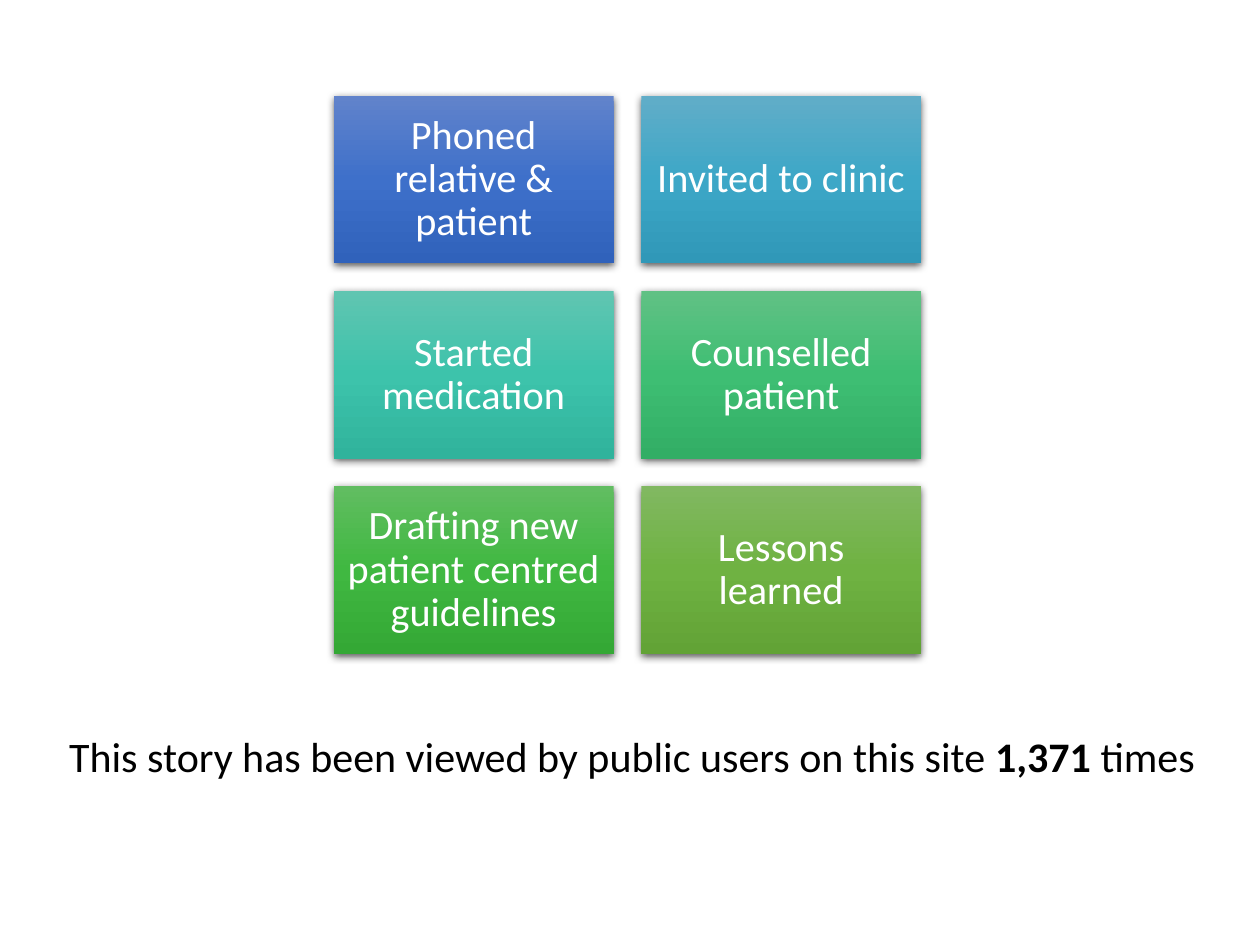
from dataclasses import dataclass

from lxml.etree import SubElement
from pptx import Presentation
from pptx.dml.color import RGBColor
from pptx.enum.shapes import MSO_SHAPE
from pptx.enum.text import MSO_ANCHOR, PP_ALIGN
from pptx.oxml.ns import qn
from pptx.shapes.autoshape import Shape
from pptx.slide import Slide
from pptx.util import Inches, Pt


@dataclass(frozen=True)
class Theme:
    font: str = "Calibri"
    step_size: Pt = Pt(23)
    story_size: Pt = Pt(24)
    step_text: RGBColor = RGBColor(0xFF, 0xFF, 0xFF)
    story_text: RGBColor = RGBColor(0, 0, 0)
    shadow: str = "000000"


@dataclass(frozen=True)
class Step:
    label: str
    top_color: str
    middle_color: str
    bottom_color: str


THEME = Theme()
STEPS = [
    Step("Phoned relative & patient", "6183CB", "3E70CA", "3062BB"),
    Step("Invited to clinic", "61ADC8", "3DA7C7", "3098B8"),
    Step("Started medication", "60C5B1", "3DC3AB", "30B39C"),
    Step("Counselled patient", "60C184", "3EBE73", "32AE65"),
    Step("Drafting new patient centred guidelines", "61BD61", "40B841", "34A835"),
    Step("Lessons learned", "81B861", "6FB242", "62A336"),
]
COLUMNS = 2
GRID_LEFT, GRID_TOP = 2.65, 0.76
STEP_WIDTH, STEP_HEIGHT = 2.22, 1.33
GAP = 0.22


def fill_gradient(tile: Shape, step: Step) -> None:
    """Fill from top to bottom with three evenly spaced stops."""
    tile.fill.gradient()
    tile.fill.gradient_angle = 270
    stops = tile._element.spPr.find(f".//{qn('a:gsLst')}")
    for stop in list(stops):
        stops.remove(stop)
    colors = (step.top_color, step.middle_color, step.bottom_color)
    for index, color in enumerate(colors):
        stop = SubElement(stops, qn("a:gs"), pos=str(index * 50000))
        SubElement(stop, qn("a:srgbClr"), val=color)


def cast_shadow(tile: Shape) -> None:
    tile.shadow.inherit = False
    effects = tile._element.spPr.find(qn("a:effectLst"))
    shadow = SubElement(
        effects, qn("a:outerShdw"), blurRad=str(Pt(4.5)), dist=str(Pt(1.5)),
        dir="5400000", algn="ctr", rotWithShape="0",
    )
    color = SubElement(shadow, qn("a:srgbClr"), val=THEME.shadow)
    SubElement(color, qn("a:alpha"), val="63000")


def add_step(slide: Slide, step: Step, row: int, column: int) -> None:
    tile = slide.shapes.add_shape(
        MSO_SHAPE.RECTANGLE,
        Inches(GRID_LEFT + column * (STEP_WIDTH + GAP)),
        Inches(GRID_TOP + row * (STEP_HEIGHT + GAP)),
        Inches(STEP_WIDTH), Inches(STEP_HEIGHT),
    )
    fill_gradient(tile, step)
    tile.line.fill.background()
    cast_shadow(tile)

    frame = tile.text_frame
    frame.word_wrap = True
    frame.vertical_anchor = MSO_ANCHOR.MIDDLE
    frame.margin_left = frame.margin_right = Inches(0.1)
    frame.margin_top = frame.margin_bottom = Inches(0.1)
    label = frame.paragraphs[0]
    label.text = step.label
    label.alignment = PP_ALIGN.CENTER
    label.line_spacing = 0.9
    label.font.name = THEME.font
    label.font.size = THEME.step_size
    label.font.color.rgb = THEME.step_text


def add_story_views(slide: Slide) -> None:
    frame = slide.shapes.add_textbox(
        Inches(0.45), Inches(5.75), Inches(9.38), Inches(0.5)
    ).text_frame
    frame.word_wrap = True
    sentence = frame.paragraphs[0]
    sentence.font.name = THEME.font
    sentence.font.size = THEME.story_size
    sentence.font.color.rgb = THEME.story_text
    sentence.add_run().text = "This story has been viewed by public users on this site "
    views = sentence.add_run()
    views.text = "1,371"
    views.font.bold = True
    sentence.add_run().text = " times"


def main() -> None:
    deck = Presentation()
    deck.slide_width, deck.slide_height = Inches(10), Inches(7.5)
    slide = deck.slides.add_slide(deck.slide_layouts[6])
    add_story_views(slide)
    for index, step in enumerate(STEPS):
        add_step(slide, step, *divmod(index, COLUMNS))
    deck.save("out.pptx")


if __name__ == "__main__":
    main()
